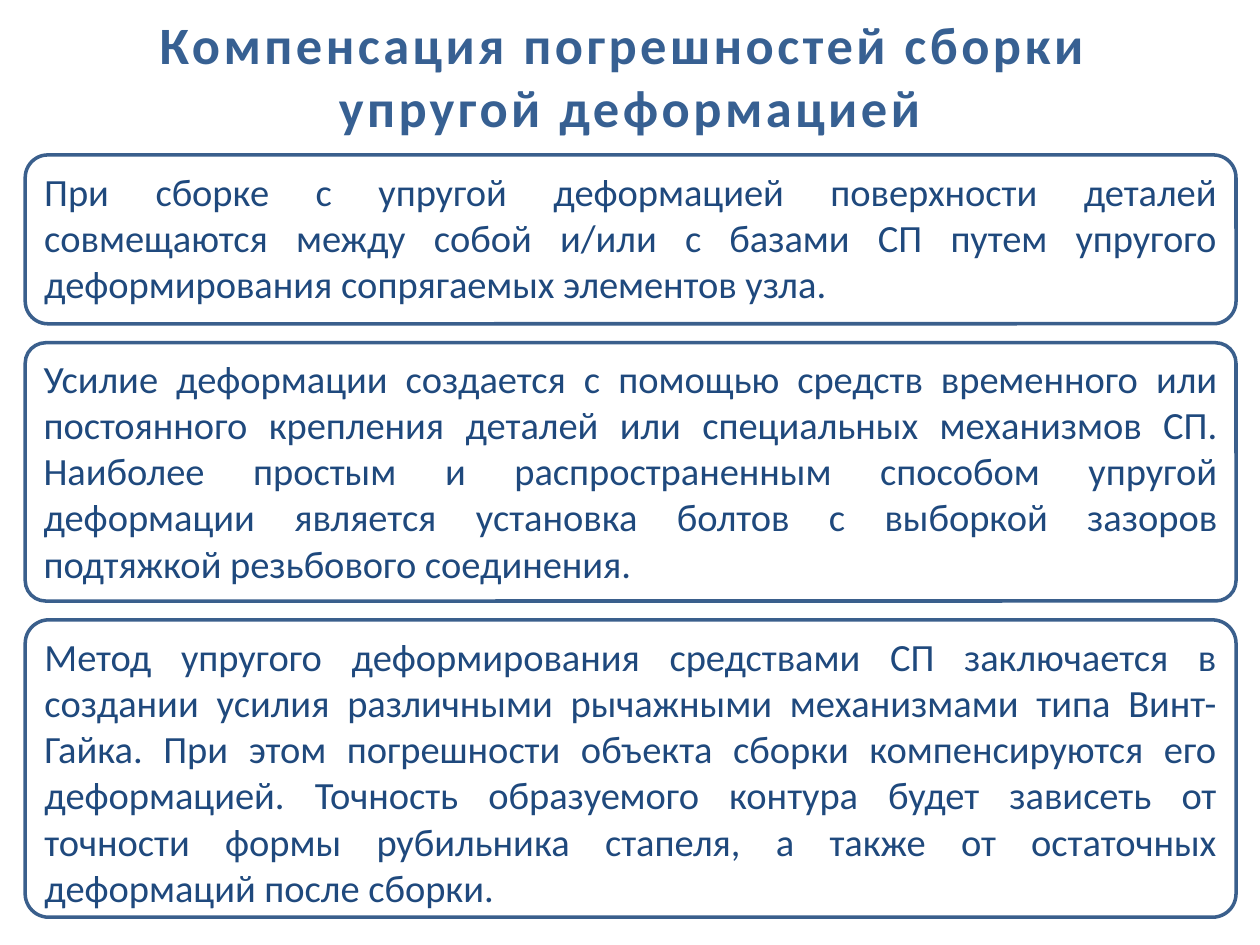
from pptx import Presentation
from pptx.dml.color import RGBColor
from pptx.enum.shapes import MSO_SHAPE
from pptx.enum.text import MSO_ANCHOR, PP_ALIGN
from pptx.util import Inches, Pt

WIDTH, HEIGHT = 10, 7.5
LEFT, TOP, GAP = 0.2, 1.23, 0.15
PANEL_WIDTH = 9.61
TITLE = ["Компенсация погрешностей сборки ", "упругой деформацией"]
PANELS = [
    (1.34, 0.134,
     "При сборке с упругой деформацией поверхности деталей совмещаются между "
     "собой и/или с базами СП путем упругого деформирования сопрягаемых "
     "элементов узла."),
    (2.05, 0.079,
     "Усилие деформации создается с помощью средств временного или постоянного "
     "крепления деталей или специальных механизмов СП. Наиболее простым и "
     "распространенным способом упругой деформации является установка болтов "
     "с выборкой зазоров подтяжкой резьбового соединения."),
    (2.36, 0.079,
     "Метод упругого деформирования средствами СП заключается в создании усилия "
     "различными рычажными механизмами типа Винт-Гайка. При этом погрешности "
     "объекта сборки компенсируются его деформацией. Точность образуемого "
     "контура будет зависеть от точности формы рубильника стапеля, а также от "
     "остаточных деформаций после сборки."),
]


def color(value):
    return RGBColor.from_string(value)


def add_run(p, text, size, fill, bold=False):
    r = p.add_run()
    r.text = text
    r.font.name = "Calibri"
    r.font.size = Pt(size)
    r.font.bold = bold
    r.font.color.rgb = color(fill)
    return r


def add_title(s, lines):
    sp = s.shapes.add_textbox(0, Inches(0.05), Inches(WIDTH), Inches(1.1))
    tf = sp.text_frame
    tf.word_wrap = True
    for i, line in enumerate(lines):
        p = tf.add_paragraph() if i else tf.paragraphs[0]
        p.alignment = PP_ALIGN.CENTER
        r = add_run(p, line, 30, "376092", bold=True)
        r.font._element.set("spc", "200")


def add_panel(s, top, height, corner, text):
    sp = s.shapes.add_shape(MSO_SHAPE.ROUNDED_RECTANGLE, Inches(LEFT), Inches(top),
                            Inches(PANEL_WIDTH), Inches(height))
    sp.adjustments[0] = corner
    sp.shadow.inherit = False
    sp.fill.background()
    sp.line.color.rgb = color("3A5F8C")
    sp.line.width = Pt(2)
    tf = sp.text_frame
    tf.word_wrap = True
    tf.vertical_anchor = MSO_ANCHOR.TOP
    p = tf.paragraphs[0]
    p.alignment = PP_ALIGN.JUSTIFY
    add_run(p, text, 22, "1F497D")


def main():
    prs = Presentation()
    prs.slide_width, prs.slide_height = Inches(WIDTH), Inches(HEIGHT)
    s = prs.slides.add_slide(prs.slide_layouts[6])
    add_title(s, TITLE)
    top = TOP
    for height, corner, text in PANELS:
        add_panel(s, top, height, corner, text)
        top += height + GAP
    prs.save("out.pptx")


if __name__ == "__main__":
    main()
